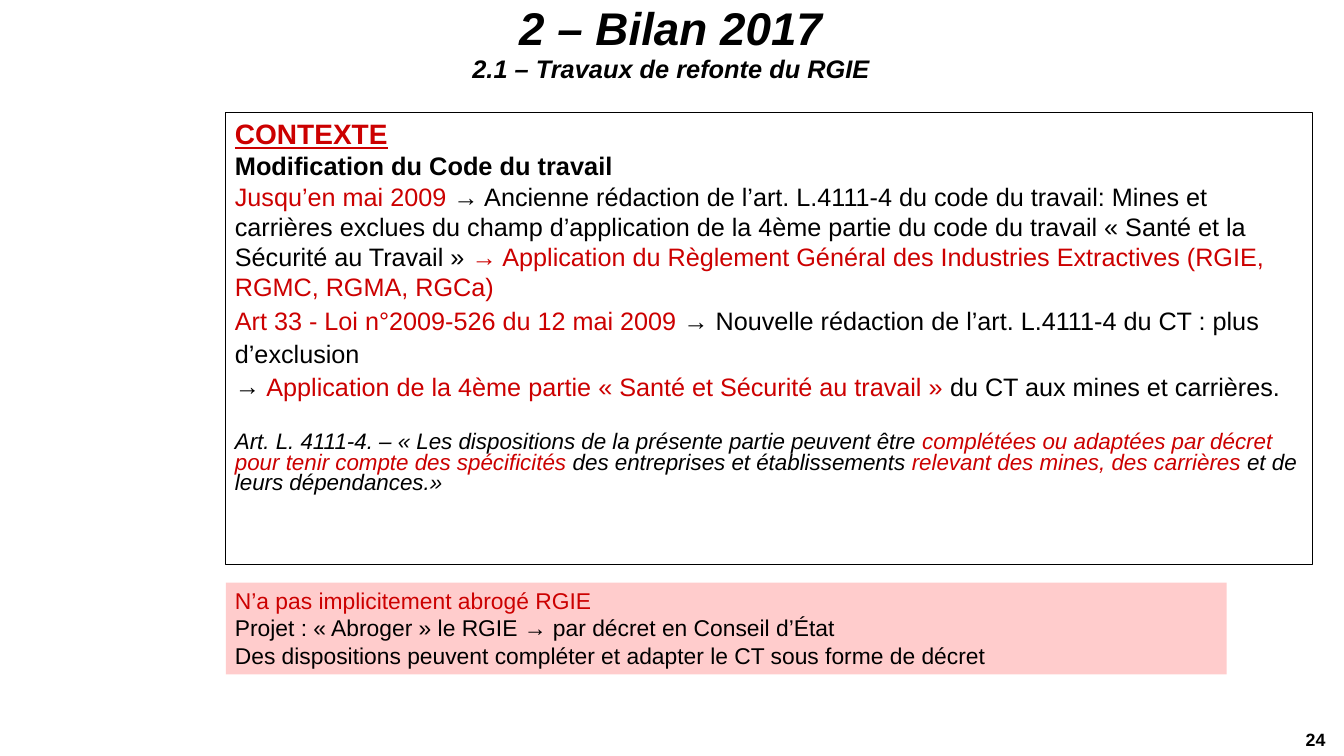
from pptx import Presentation
from pptx.dml.color import RGBColor
from pptx.enum.shapes import MSO_SHAPE
from pptx.enum.text import MSO_ANCHOR, PP_ALIGN
from pptx.oxml import parse_xml
from pptx.oxml.ns import nsdecls
from pptx.util import Pt

LEFT, CENTER, RIGHT = PP_ALIGN.LEFT, PP_ALIGN.CENTER, PP_ALIGN.RIGHT
TOP, MIDDLE = MSO_ANCHOR.TOP, MSO_ANCHOR.MIDDLE
RECTANGLE = MSO_SHAPE.RECTANGLE
BLACK = RGBColor(0x00, 0x00, 0x00)
WHITE = RGBColor(0xFF, 0xFF, 0xFF)
RED = RGBColor(0xCC, 0x00, 0x00)
PINK = RGBColor(0xFF, 0xCC, 0xCC)
FONT = "Arial"

# Content: each paragraph is (style, [(text, colour), ...])
TITLE = [
    ("title", [("2 – Bilan 2017", BLACK)]),
    ("subtitle", [("2.1 – Travaux de refonte du RGIE", BLACK)]),
]
CONTEXT = [
    ("heading", [("CONTEXTE", RED)]),
    ("subheading", [("Modification du Code du travail", BLACK)]),
    ("body", [
        ("Jusqu’en mai 2009 ", RED),
        ("→ Ancienne rédaction de l’art. L.4111-4 du code du travail: Mines et carrières "
         "exclues du champ d’application de la 4ème partie du code du travail "
         "« Santé et la Sécurité au Travail » ", BLACK),
        ("→ Application du Règlement Général des Industries Extractives "
         "(RGIE, RGMC, RGMA, RGCa)", RED),
    ]),
    ("loose", [
        ("Art 33 - Loi n°2009-526 du 12 mai 2009 ", RED),
        ("→ Nouvelle rédaction de l’art. L.4111-4 du CT : plus d’exclusion", BLACK),
    ]),
    ("arrow", [
        ("Application de la 4ème partie « Santé et Sécurité au travail » ", RED),
        ("du CT aux mines et carrières.", BLACK),
    ]),
    ("quote", [
        ("Art. L. 4111-4. – « Les dispositions de la présente partie peuvent être ", BLACK),
        ("complétées ou adaptées par décret pour tenir compte des spécificités", RED),
        (" des entreprises et établissements ", BLACK),
        ("relevant des mines, des carrières", RED),
        (" et de leurs dépendances.»", BLACK),
    ]),
]
CONCLUSION = [
    ("note", [("N’a pas implicitement abrogé RGIE", RED)]),
    ("note", [("Projet : « Abroger » le RGIE → par décret en Conseil d’État", BLACK)]),
    ("note", [("Des dispositions peuvent compléter et adapter le CT sous forme de décret",
               BLACK)]),
]
PAGE_NUMBER = [("page", [("24", BLACK)])]

# Styles: size, bold, italic, underline, line spacing, space before
STYLES = {
    "title": (32.7, True, True, False, 0.93, 0),
    "subtitle": (18.1, True, True, False, 0.93, 0),
    "heading": (20, True, False, True, 1, 0),
    "subheading": (18.1, True, False, False, 1, 0),
    "body": (18, False, False, False, 1, 0),
    "loose": (18, False, False, False, 1.1, 0),
    "arrow": (18, False, False, False, 1.1, 0),
    "quote": (16, False, True, False, 0.75, 23),
    "note": (16.3, False, False, False, 1, 0),
    "page": (12.7, True, False, False, 1, 0),
}
ARROW_INDENT = 22.5

# Layout: left, top, width, height
BOX_LEFT = 161.3
TITLE_AREA = (171.4, 0, 615.6, 64)
CONTEXT_AREA = (BOX_LEFT, 80.6, 776.2, 322.6)
CONCLUSION_AREA = (BOX_LEFT, 416.2, 715, 65.5)
PAGE_AREA = (858.2, 520.6, 88.6, 37.4)
BOX_INSETS = (6.5, 2.9)


def add_arrow_bullet(paragraph):
    properties = paragraph._p.get_or_add_pPr()
    properties.set("marL", str(Pt(ARROW_INDENT)))
    properties.set("indent", str(-Pt(ARROW_INDENT)))
    namespace = nsdecls("a")
    for element in (
        f'<a:buClr {namespace}><a:srgbClr val="{BLACK}"/></a:buClr>',
        f'<a:buFont {namespace} typeface="{FONT}"/>',
        f'<a:buChar {namespace} char="→"/>',
    ):
        properties.append(parse_xml(element))


def write_text(shape, paragraphs, alignment=LEFT, anchor=TOP, insets=(0, 0)):
    frame = shape.text_frame
    frame.word_wrap = True
    frame.vertical_anchor = anchor
    frame.margin_left = frame.margin_right = Pt(insets[0])
    frame.margin_top = frame.margin_bottom = Pt(insets[1])
    for index, (style, runs) in enumerate(paragraphs):
        paragraph = frame.add_paragraph() if index else frame.paragraphs[0]
        size, bold, italic, underline, line_spacing, space_before = STYLES[style]
        paragraph.alignment = alignment
        paragraph.line_spacing = line_spacing
        paragraph.space_before = Pt(space_before)
        if style == "arrow":
            add_arrow_bullet(paragraph)
        for text, colour in runs:
            run = paragraph.add_run()
            run.text = text
            font = run.font
            font.name, font.size = FONT, Pt(size)
            font.bold, font.italic, font.underline = bold, italic, underline
            font.color.rgb = colour


def add_label(slide, area, paragraphs, alignment, anchor=TOP):
    label = slide.shapes.add_textbox(*map(Pt, area))
    write_text(label, paragraphs, alignment, anchor)


def add_box(slide, area, paragraphs, fill, outline=None):
    box = slide.shapes.add_shape(RECTANGLE, *map(Pt, area))
    box.shadow.inherit = False
    box.fill.solid()
    box.fill.fore_color.rgb = fill
    if outline is None:
        box.line.fill.background()
    else:
        box.line.color.rgb = outline
        box.line.width = Pt(0.75)
    write_text(box, paragraphs, insets=BOX_INSETS)


def main():
    presentation = Presentation()
    presentation.slide_width, presentation.slide_height = Pt(960), Pt(540)
    slide = presentation.slides.add_slide(presentation.slide_layouts[6])

    # Title and page number
    add_label(slide, TITLE_AREA, TITLE, CENTER, MIDDLE)
    add_label(slide, PAGE_AREA, PAGE_NUMBER, RIGHT)

    # Context and conclusion
    add_box(slide, CONCLUSION_AREA, CONCLUSION, PINK)
    add_box(slide, CONTEXT_AREA, CONTEXT, WHITE, BLACK)

    presentation.save("out.pptx")


if __name__ == "__main__":
    main()
